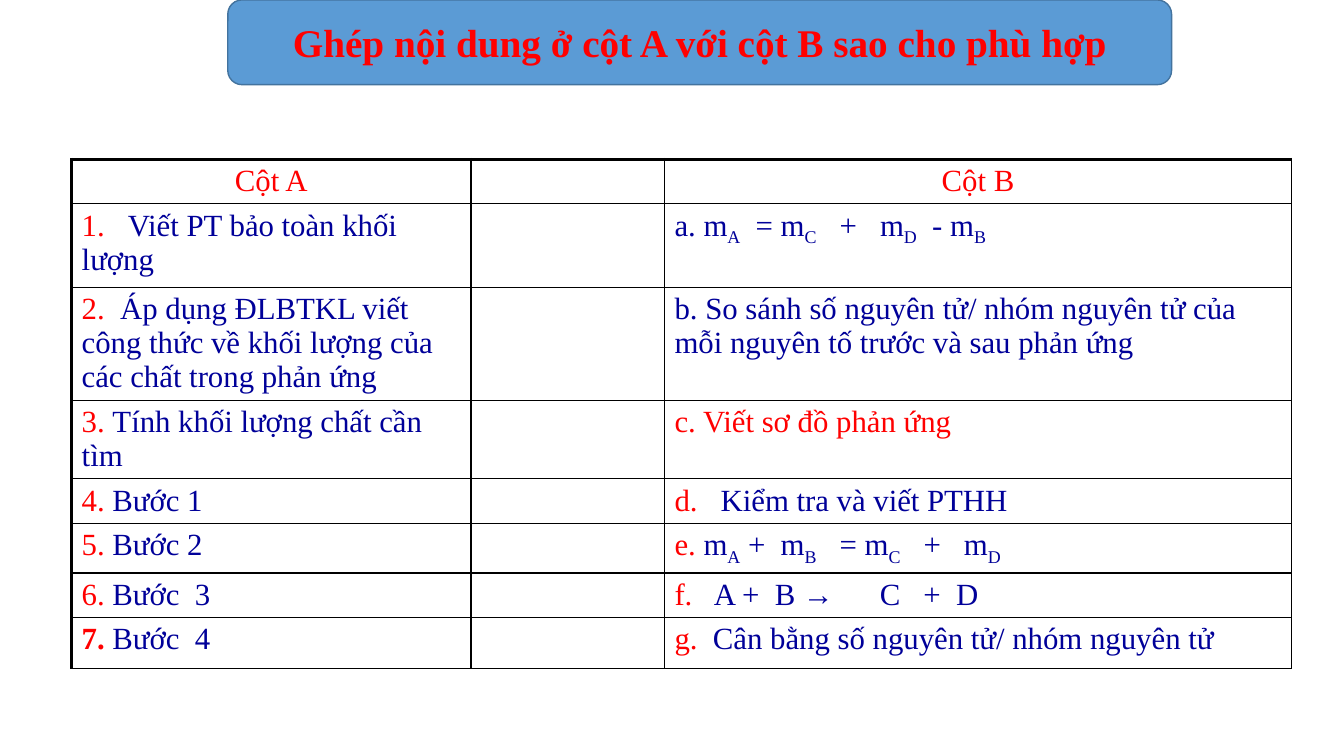
from dataclasses import dataclass

from lxml.etree import SubElement
from pptx import Presentation
from pptx.dml.color import RGBColor
from pptx.enum.shapes import MSO_SHAPE
from pptx.enum.text import MSO_ANCHOR, PP_ALIGN
from pptx.oxml.ns import qn
from pptx.util import Inches, Pt


@dataclass(frozen=True)
class Theme:
    font: str = "Times New Roman"
    accent: str = "FF0000"
    body: str = "000099"
    banner: str = "5B9BD5"
    banner_line: str = "43739E"
    border: str = "000000"
    title_size: float = 28
    cell_size: float = 22
    thin: float = 1
    thick: float = 2.25


class SlideBuilder:
    """Draws on one slide; every length is a percentage of the slide's size."""

    def __init__(self, prs, theme):
        self.prs = prs
        self.theme = theme
        self.s = prs.slides.add_slide(prs.slide_layouts[6])

    def x(self, share):
        return round(self.prs.slide_width * share / 100)

    def y(self, share):
        return round(self.prs.slide_height * share / 100)

    def box(self, left, top, width, height):
        return self.x(left), self.y(top), self.x(width), self.y(height)

    def run(self, p, text, size, color, bold=False, subscript=False):
        r = p.add_run()
        r.text = text
        r.font.name = self.theme.font
        r.font.size = Pt(size)
        r.font.bold = bold
        r.font.color.rgb = RGBColor.from_string(color)
        if subscript:
            r.font._element.set("baseline", "-25000")

    def formula(self, p, text):
        """Write body text in which the letter after each underscore is a subscript."""
        size, color = self.theme.cell_size, self.theme.body
        first, *rest = text.split("_")
        if first:
            self.run(p, first, size, color)
        for part in rest:
            self.run(p, part[0], size, color, subscript=True)
            if part[1:]:
                self.run(p, part[1:], size, color)

    def banner(self, text, *box):
        sp = self.s.shapes.add_shape(MSO_SHAPE.ROUNDED_RECTANGLE, *self.box(*box))
        sp.shadow.inherit = False
        sp.fill.solid()
        sp.fill.fore_color.rgb = RGBColor.from_string(self.theme.banner)
        sp.line.color.rgb = RGBColor.from_string(self.theme.banner_line)
        sp.line.width = Pt(self.theme.thin)
        tf = sp.text_frame
        tf.word_wrap = True
        tf.vertical_anchor = MSO_ANCHOR.MIDDLE
        p = tf.paragraphs[0]
        p.alignment = PP_ALIGN.CENTER
        self.run(p, text, self.theme.title_size, self.theme.accent, bold=True)

    def borders(self, cell, **widths):
        tcPr = cell._tc.get_or_add_tcPr()
        for side, width in widths.items():
            ln = SubElement(tcPr, qn(f"a:ln{side}"), w=str(Pt(width)))
            fill = SubElement(ln, qn("a:solidFill"))
            SubElement(fill, qn("a:srgbClr"), val=self.theme.border)

    def table(self, rows, left, top, widths, heights):
        box = self.box(left, top, sum(widths), sum(heights))
        tbl = self.s.shapes.add_table(len(rows), len(widths), *box).table
        tbl.first_row = tbl.horz_banding = False
        for column, width in zip(tbl.columns, widths):
            column.width = self.x(width)
        thin, thick = self.theme.thin, self.theme.thick
        for i, (row, height, contents) in enumerate(zip(tbl.rows, heights, rows)):
            row.height = self.y(height)
            for j, (cell, content) in enumerate(zip(row.cells, contents)):
                self.borders(cell, L=thin if j else thick, R=thin,
                             T=thin if i else thick, B=thin)
                cell.fill.background()
                if not content:
                    continue
                marker, body = content
                p = cell.text_frame.paragraphs[0]
                p.alignment = PP_ALIGN.LEFT if i else PP_ALIGN.CENTER
                if marker:
                    self.run(p, marker, self.theme.cell_size, self.theme.accent,
                             bold=marker == BOLD_MARKER)
                self.formula(p, body)


BOLD_MARKER = "7. "
# Each cell is (red marker, blue body); the middle column is left for answers.
MATCHING = [
    (("Cột A", ""), None, ("Cột B", "")),
    (("1.   ", "Viết PT bảo toàn khối lượng"), None,
     ("", "a. m_A  = m_C   +   m_D  - m_B")),
    (("2.  ", "Áp dụng ĐLBTKL viết công thức về khối lượng của các chất trong phản ứng"), None,
     ("", "b. So sánh số nguyên tử/ nhóm nguyên tử của mỗi nguyên tố trước và sau phản ứng")),
    (("3. ", "Tính khối lượng chất cần tìm"), None, ("c. Viết sơ đồ phản ứng", "")),
    (("4. ", "Bước 1"), None, ("d.   ", "Kiểm tra và viết PTHH")),
    (("5. ", "Bước 2"), None, ("e. ", "m_A +  m_B   = m_C   +   m_D")),
    (("6. ", "Bước  3"), None, ("f. ", "  A +  B →      C   +  D")),
    ((BOLD_MARKER, "Bước  4"), None, ("g.  ", "Cân bằng số nguyên tử/ nhóm nguyên tử")),
]


def main():
    prs = Presentation()
    prs.slide_width, prs.slide_height = Inches(13.33), Inches(7.5)
    slide = SlideBuilder(prs, Theme())
    slide.table(MATCHING, left=5.33, top=21.07, widths=[29.71, 14.4, 46.66],
                heights=[5.87, 11.07, 14.93, 10.4, 5.87, 6.6, 5.87, 6.8])
    slide.banner("Ghép nội dung ở cột A với cột B sao cho phù hợp", 16.95, 0, 70.22, 11.2)
    prs.save("out.pptx")


if __name__ == "__main__":
    main()
